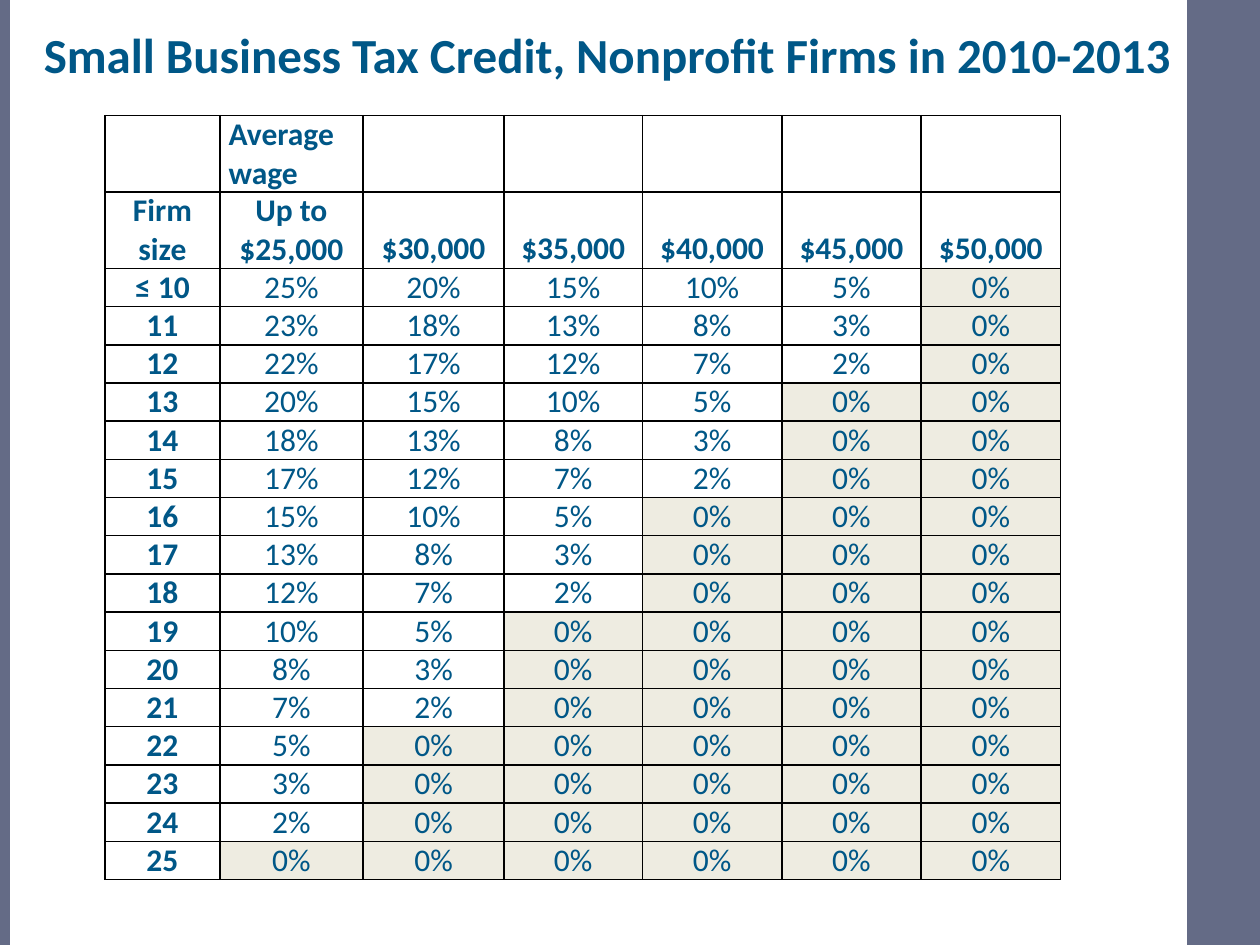
from lxml.etree import SubElement
from pptx import Presentation
from pptx.dml.color import RGBColor
from pptx.enum.shapes import MSO_SHAPE
from pptx.enum.text import MSO_ANCHOR, MSO_AUTO_SIZE, PP_ALIGN
from pptx.oxml.ns import qn
from pptx.util import Cm, Pt

TITLE = "Small Business Tax Credit, Nonprofit Firms in 2010-2013"
GROUP_HEADER = ["", "Average wage", "", "", "", "", ""]
HEADER = ["Firm size", "Up to $25,000", "$30,000", "$35,000", "$40,000", "$45,000", "$50,000"]
CREDITS = [
    ("≤ 10", [25, 20, 15, 10, 5]),
    ("11", [23, 18, 13, 8, 3]),
    ("12", [22, 17, 12, 7, 2]),
    ("13", [20, 15, 10, 5]),
    ("14", [18, 13, 8, 3]),
    ("15", [17, 12, 7, 2]),
    ("16", [15, 10, 5]),
    ("17", [13, 8, 3]),
    ("18", [12, 7, 2]),
    ("19", [10, 5]),
    ("20", [8, 3]),
    ("21", [7, 2]),
    ("22", [5]),
    ("23", [3]),
    ("24", [2]),
    ("25", []),
]
COLORS = {"text": "005787", "bar": "646B86", "zero": "EEECE1", "border": "000000"}
FONT = "Calibri"
COLUMN_WIDTHS = [2.31, 2.89, 2.84, 2.79, 2.81, 2.81, 2.81]
ROW_HEIGHT = 0.77
SIDE_BARS = [(23.93, 1.47), (0, 0.2)]


def rgb(name):
    return RGBColor.from_string(COLORS[name])


def add_text(paragraph, text, size, bold, alignment):
    paragraph.alignment = alignment
    run = paragraph.add_run()
    run.text = text
    run.font.name = FONT
    run.font.size = Pt(size)
    run.font.bold = bold
    run.font.color.rgb = rgb("text")


def add_borders(cell):
    properties = cell._tc.get_or_add_tcPr()
    for index, tag in enumerate(("a:lnL", "a:lnR", "a:lnT", "a:lnB")):
        line = properties.makeelement(qn(tag), {"w": str(Pt(1))})
        properties.insert(index, line)
        fill = SubElement(line, qn("a:solidFill"))
        SubElement(fill, qn("a:srgbClr"), val=COLORS["border"])


def format_cell(cell, text, bold, alignment, anchor):
    cell.margin_left = cell.margin_right = Cm(0.18)
    cell.margin_top = cell.margin_bottom = 0
    cell.vertical_anchor = anchor
    if text == "0%":
        cell.fill.solid()
        cell.fill.fore_color.rgb = rgb("zero")
    else:
        cell.fill.background()
    add_borders(cell)
    if text:
        add_text(cell.text_frame.paragraphs[0], text, 18, bold, alignment)


def add_side_bars(slide):
    for left, width in SIDE_BARS:
        bar = slide.shapes.add_shape(MSO_SHAPE.RECTANGLE, Cm(left), 0, Cm(width), Cm(19.05))
        bar.shadow.inherit = False
        bar.fill.solid()
        bar.fill.fore_color.rgb = rgb("bar")
        bar.line.fill.background()


def add_credit_table(slide):
    columns = len(HEADER)
    rows = [GROUP_HEADER, HEADER]
    for firm_size, rates in CREDITS:
        padded = rates + [0] * (columns - 1 - len(rates))
        rows.append([firm_size] + [f"{rate}%" for rate in padded])
    heights = [2 * ROW_HEIGHT] * 2 + [ROW_HEIGHT] * len(CREDITS)
    table = slide.shapes.add_table(
        len(rows), columns, Cm(2.12), Cm(2.33), Cm(sum(COLUMN_WIDTHS)), Cm(sum(heights))
    ).table
    table.first_row = table.horz_banding = False
    for column, width in zip(table.columns, COLUMN_WIDTHS):
        column.width = Cm(width)
    for row_index, (values, height) in enumerate(zip(rows, heights)):
        table.rows[row_index].height = Cm(height)
        alignment = PP_ALIGN.LEFT if row_index == 0 else PP_ALIGN.CENTER
        anchor = MSO_ANCHOR.BOTTOM if row_index == 1 else MSO_ANCHOR.TOP
        for column_index, text in enumerate(values):
            bold = row_index < 2 or column_index == 0
            format_cell(table.cell(row_index, column_index), text, bold, alignment, anchor)


def add_title(slide):
    title = slide.shapes.title
    title.left, title.top, title.width, title.height = Cm(0), Cm(0.36), Cm(24.48), Cm(1.45)
    frame = title.text_frame
    frame.word_wrap = True
    frame.auto_size = MSO_AUTO_SIZE.SHAPE_TO_FIT_TEXT
    frame.vertical_anchor = MSO_ANCHOR.MIDDLE
    add_text(frame.paragraphs[0], TITLE, 28, True, PP_ALIGN.CENTER)


def main():
    presentation = Presentation()
    presentation.slide_width, presentation.slide_height = Cm(25.4), Cm(19.05)
    slide = presentation.slides.add_slide(presentation.slide_layouts[5])
    add_side_bars(slide)
    add_credit_table(slide)
    add_title(slide)
    presentation.save("out.pptx")


if __name__ == "__main__":
    main()
